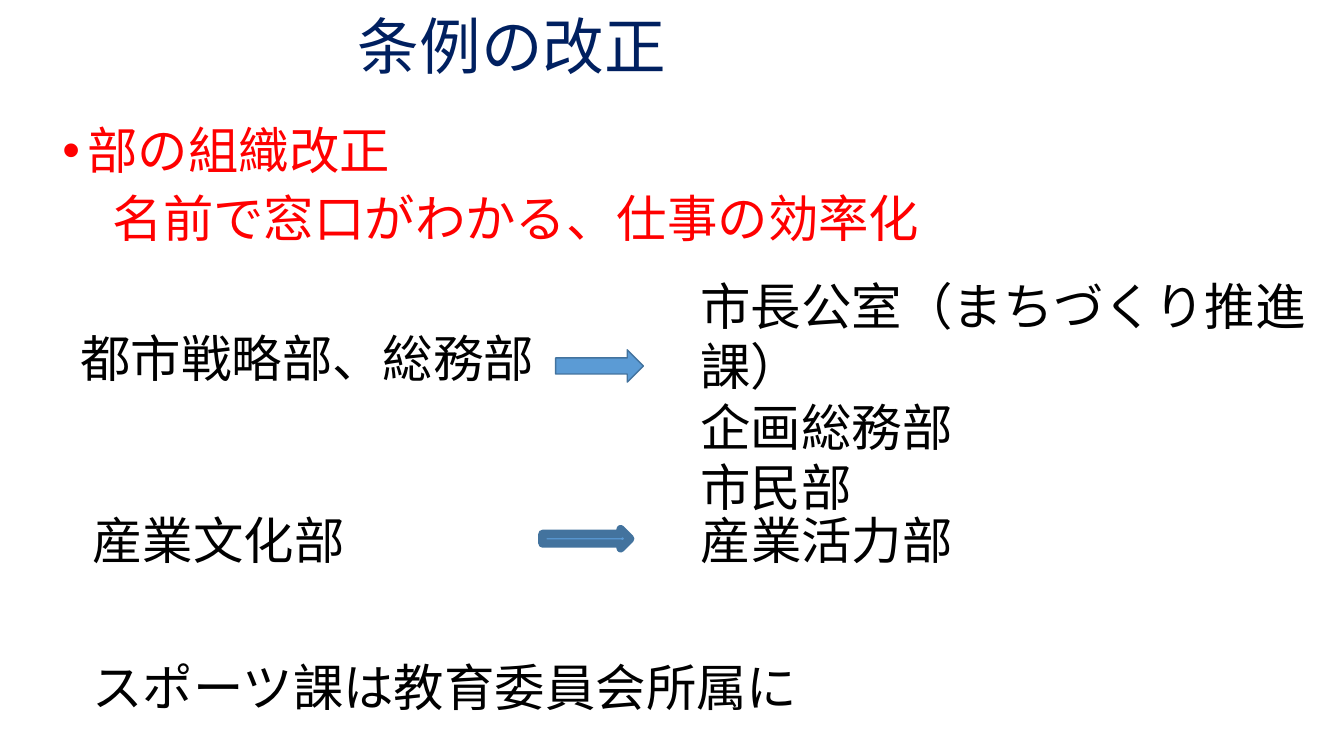
from lxml.etree import SubElement
from pptx import Presentation
from pptx.dml.color import RGBColor
from pptx.enum.shapes import MSO_SHAPE
from pptx.enum.text import MSO_ANCHOR, MSO_AUTO_SIZE, PP_ALIGN
from pptx.oxml.ns import qn
from pptx.util import Inches, Pt

WIDTH, HEIGHT = Inches(13.33), Inches(7.5)
FONT = "Calibri"
COLORS = {
    "title": "002060",
    "heading": "FF0000",
    "body": "000000",
    "arrow": "5B9BD5",
    "arrow_edge": "43739E",
}
# Percentages of the slide's width and height
OLD_LEFT, NEW_LEFT = 6.15, 51.39
INDUSTRY_TOP = 66.67
LINE_HEIGHT = 9.47
ARROW_WIDTH = 6.53


def color(name):
    return RGBColor.from_string(COLORS[name])


def area(left, top, width, height):
    """Turn percentages of the slide into lengths."""
    return (int(WIDTH * left / 100), int(HEIGHT * top / 100),
            int(WIDTH * width / 100), int(HEIGHT * height / 100))


def write(paragraph, text, size=36, tint="body", spacing=None, before=0,
          margin=0, bullet=False):
    paragraph.alignment = PP_ALIGN.LEFT
    paragraph.line_spacing = spacing
    paragraph.space_before = Pt(before)
    run = paragraph.add_run()
    run.text = text
    run.font.name = FONT
    run.font.size = Pt(size)
    run.font.color.rgb = color(tint)
    properties = paragraph._p.get_or_add_pPr()
    properties.set("marL", str(Inches(margin)))
    if bullet:
        properties.set("indent", str(-Inches(margin)))
        SubElement(properties, qn("a:buFont"), typeface="Arial")
        SubElement(properties, qn("a:buChar"), char="•")


def add_title(slide, text, place):
    title = slide.shapes.title
    title.left, title.top, title.width, title.height = area(*place)
    frame = title.text_frame
    frame.auto_size = MSO_AUTO_SIZE.NONE
    frame.vertical_anchor = MSO_ANCHOR.MIDDLE
    write(frame.paragraphs[0], text, size=44, tint="title", spacing=0.9)


def add_text(slide, place):
    frame = slide.shapes.add_textbox(*area(*place)).text_frame
    frame.word_wrap = True
    return frame


def add_lines(slide, lines, place):
    frame = add_text(slide, place)
    for number, line in enumerate(lines):
        write(frame.add_paragraph() if number else frame.paragraphs[0], line)


def add_heading(slide, heading, aim, place):
    frame = add_text(slide, place)
    style = {"tint": "heading", "spacing": 0.9, "before": 10}
    write(frame.paragraphs[0], heading, margin=0.25, bullet=True, **style)
    write(frame.add_paragraph(), aim, margin=0.5, **style)


def add_arrow(slide, place, edge):
    arrow = slide.shapes.add_shape(MSO_SHAPE.RIGHT_ARROW, *area(*place))
    arrow.shadow.inherit = False
    arrow.fill.solid()
    arrow.fill.fore_color.rgb = color("arrow")
    arrow.line.color.rgb = color("arrow_edge")
    arrow.line.width = Pt(edge)


def main():
    deck = Presentation()
    deck.slide_width, deck.slide_height = WIDTH, HEIGHT
    slide = deck.slides.add_slide(deck.slide_layouts.get_by_name("Title Only"))

    add_title(slide, "条例の改正", (25.88, 0, 29.56, 13.07))
    add_heading(slide, "部の組織改正", "名前で窓口がわかる、仕事の効率化",
                (3.9, 16, 84.92, 27.07))

    add_lines(slide, ["都市戦略部、総務部"], (5.25, 42.67, 36.23, LINE_HEIGHT))
    add_arrow(slide, (41.34, 46.27, ARROW_WIDTH, 4.27), edge=1)
    add_lines(slide, ["市長公室（まちづくり推進課）", "企画総務部", "市民部"],
              (NEW_LEFT, 35.73, 48.61, 25.6))

    add_lines(slide, ["産業文化部"], (OLD_LEFT, INDUSTRY_TOP, 31.81, LINE_HEIGHT))
    add_arrow(slide, (40.36, 70, ARROW_WIDTH, 2.53), edge=6)
    add_lines(slide, ["産業活力部"], (NEW_LEFT, INDUSTRY_TOP, 29.78, LINE_HEIGHT))

    add_lines(slide, ["スポーツ課は教育委員会所属に"],
              (OLD_LEFT, 86.13, 56.04, LINE_HEIGHT))
    deck.save("out.pptx")


if __name__ == "__main__":
    main()
